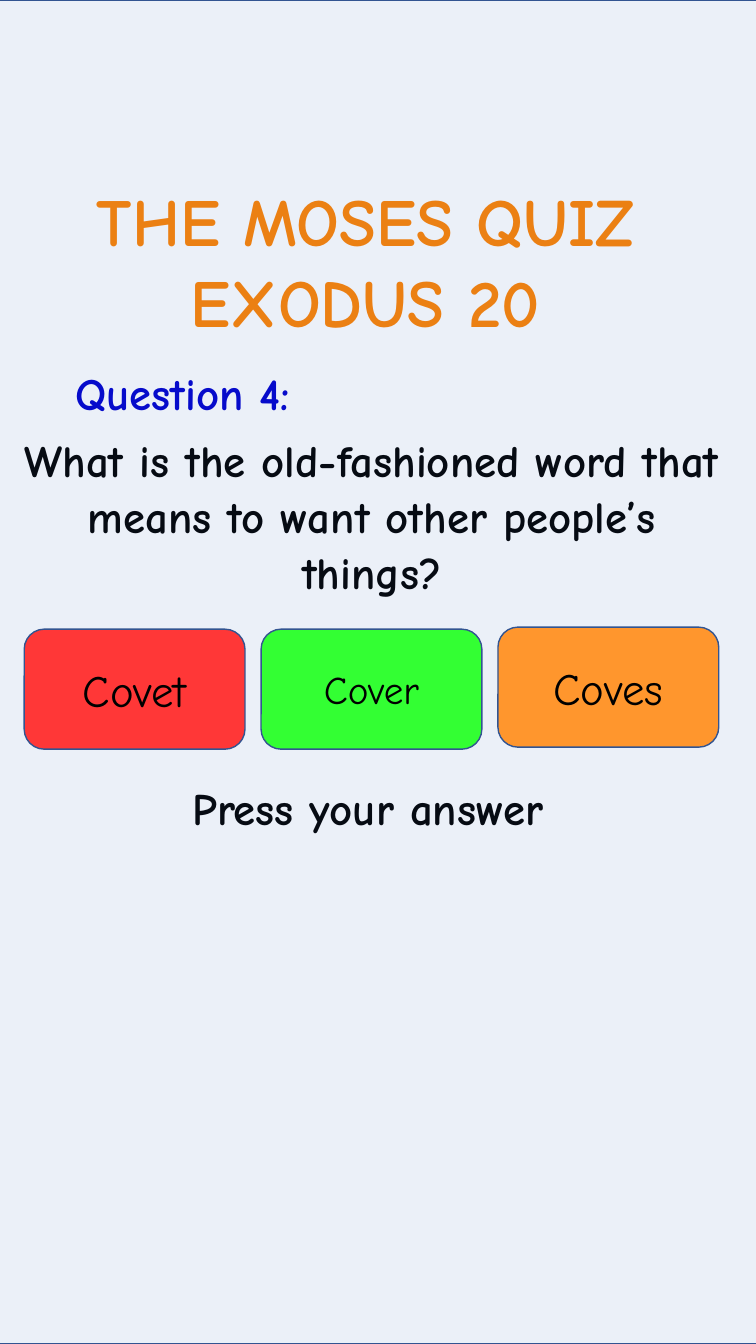
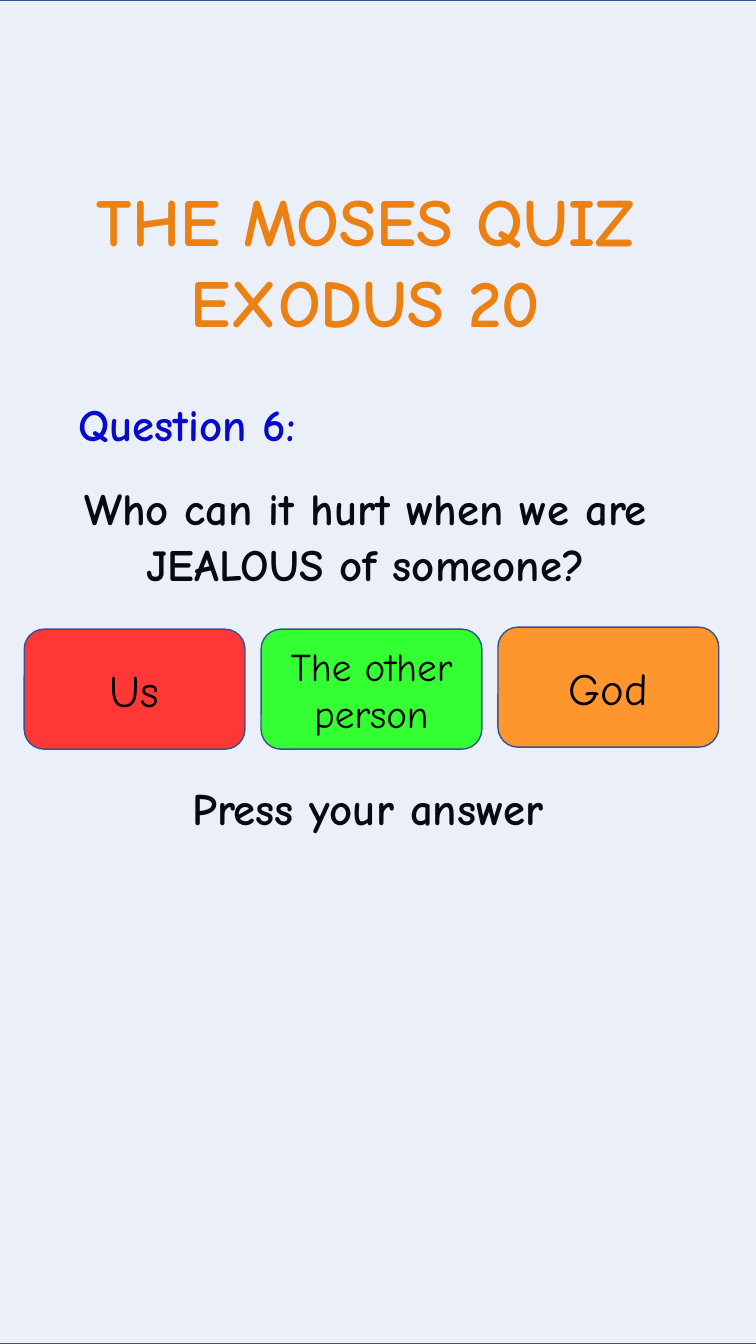
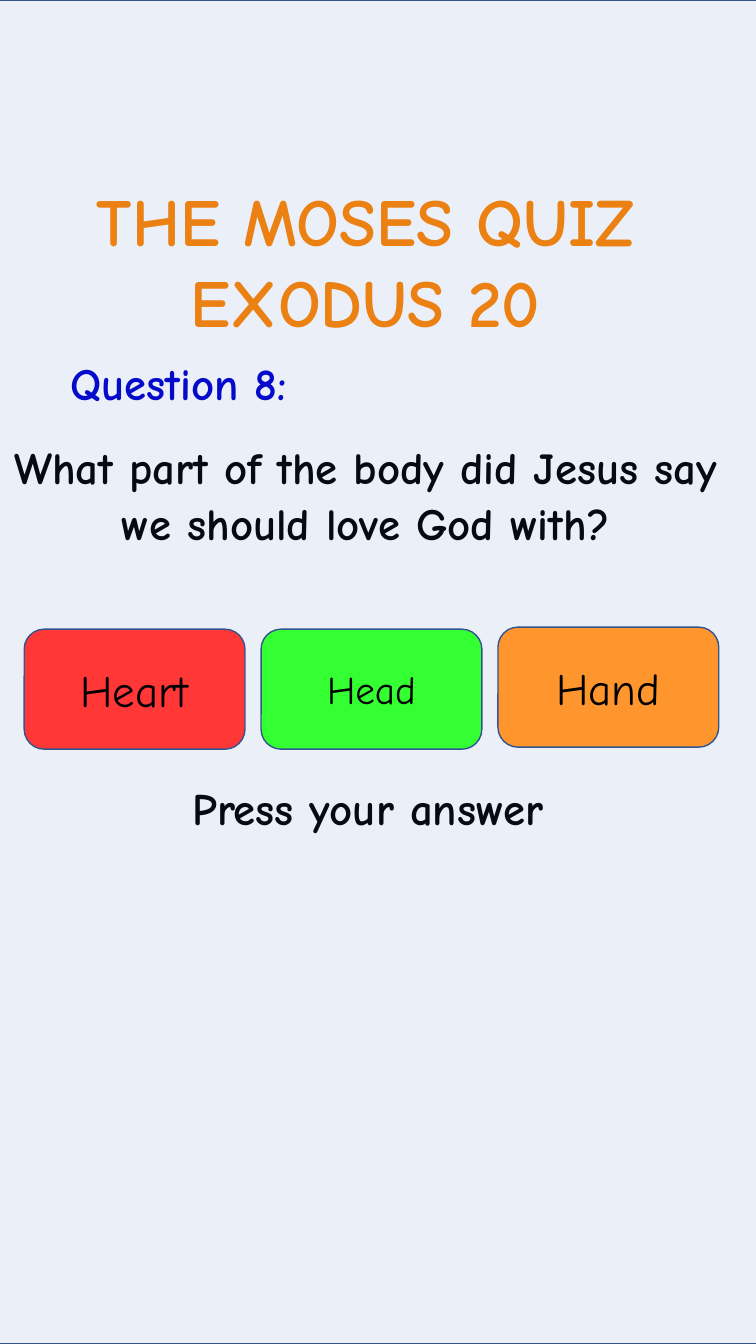
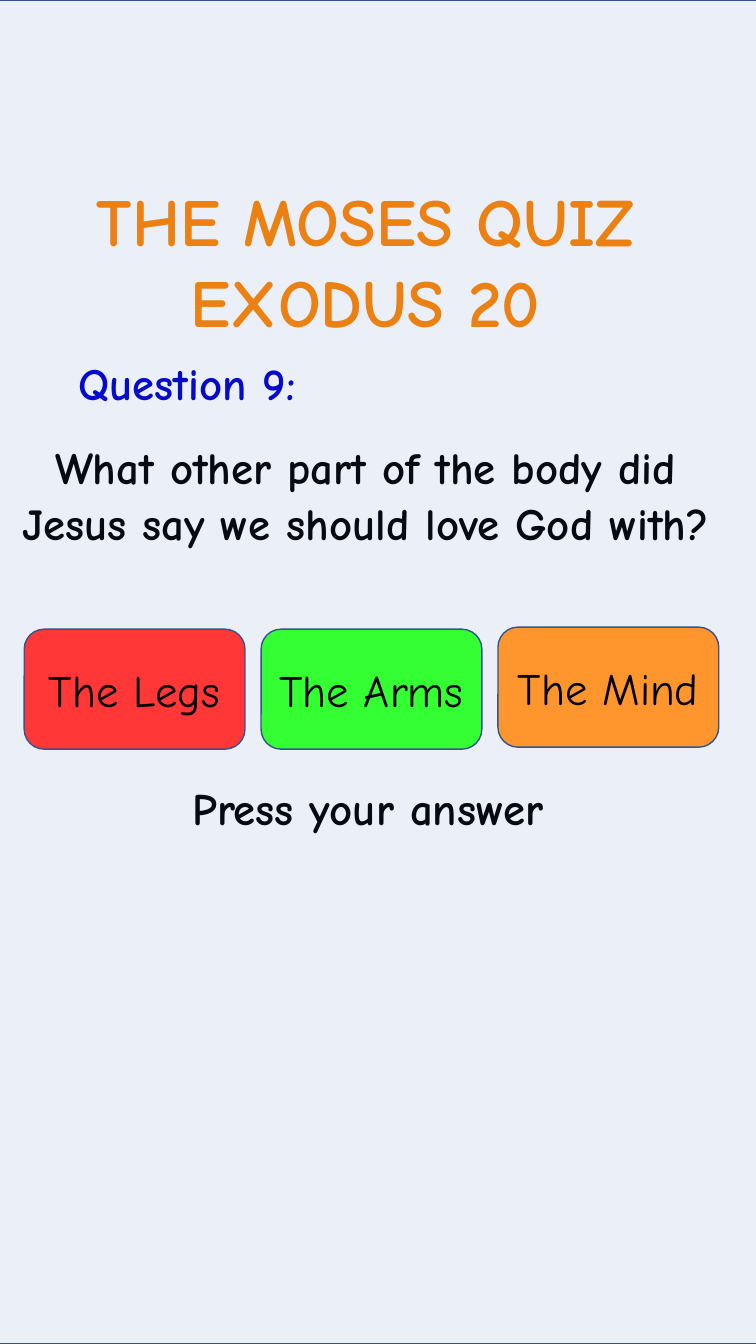
from lxml.etree import SubElement
from pptx import Presentation
from pptx.dml.color import RGBColor
from pptx.enum.shapes import MSO_SHAPE
from pptx.enum.text import MSO_ANCHOR, PP_ALIGN
from pptx.oxml.ns import qn
from pptx.util import Inches, Pt

WIDTH, HEIGHT = 7.5, 13.33
FONT = "Comic Neue"

BLACK = RGBColor(0x00, 0x00, 0x00)
ORANGE = RGBColor(0xFF, 0x82, 0x00)
BLUE = RGBColor(0x00, 0x00, 0xCC)
TINT = RGBColor(0x44, 0x72, 0xC4)
OUTLINE = RGBColor(0x32, 0x54, 0x91)
RED_BUTTON = RGBColor(0xFF, 0x37, 0x37)
GREEN_BUTTON = RGBColor(0x33, 0xFF, 0x33)
ORANGE_BUTTON = RGBColor(0xFF, 0x96, 0x2D)

TITLE = ["THE MOSES QUIZ ", "EXODUS 20 "]
PROMPT = "Press your answer"
TINT_PERCENT = 10
BLEED = 0.3

BUTTON_LEFT, BUTTON_WIDTH, BUTTON_HEIGHT, BUTTON_STEP = 0.24, 2.19, 1.19, 2.35
BUTTONS = [(RED_BUTTON, 6.24), (GREEN_BUTTON, 6.24), (ORANGE_BUTTON, 6.22)]

QUESTIONS = [
    {
        "label": "Question 4:", "label_at": (0.43, 3.58),
        "text": "What is the old-fashioned word that means to want other people’s things?",
        "text_at": (0.06, 4.22),
        "answers": [("Covet", 32), ("Cover", 28), ("Coves", 32)],
    },
    {
        "label": "Question 6:", "label_at": (0.47, 3.89),
        "text": "Who can it hurt when we are JEALOUS of someone?",
        "text_at": (0, 4.7),
        "answers": [("Us", 32), ("The other person", 28), ("God", 32)],
    },
    {
        "label": "Question 8:", "label_at": (0.39, 3.48),
        "text": "What part of the body did Jesus say we should love God with?",
        "text_at": (0, 4.29),
        "answers": [("Heart", 32), ("Head", 28), ("Hand", 32)],
    },
    {
        "label": "Question 9:", "label_at": (0.47, 3.48),
        "text": "What other part of the body did Jesus say we should love God with?",
        "text_at": (0, 4.29),
        "answers": [("The Legs", 32), ("The Arms", 32), ("The Mind", 32)],
    },
]


def write(frame, lines, size=32, color=BLACK, bold=True, align=PP_ALIGN.CENTER,
          spacing=None, before=None):
    frame.word_wrap = True
    for index, line in enumerate(lines):
        paragraph = frame.add_paragraph() if index else frame.paragraphs[0]
        paragraph.text = line
        paragraph.alignment = align
        paragraph.line_spacing = spacing
        paragraph.space_before = before
        font = paragraph.font
        font.name, font.size, font.bold = FONT, Pt(size), bold
        font.color.rgb = color


def add_text(slide, box, lines, **style):
    shape = slide.shapes.add_textbox(*map(Inches, box))
    write(shape.text_frame, lines, **style)


def add_panel(slide, kind, box, color):
    shape = slide.shapes.add_shape(kind, *map(Inches, box))
    shape.shadow.inherit = False
    shape.fill.solid()
    shape.fill.fore_color.rgb = color
    shape.line.color.rgb = OUTLINE
    shape.line.width = Pt(1)
    return shape


def add_tint(slide):
    box = (-BLEED, 0, WIDTH + 2 * BLEED, HEIGHT)
    shape = add_panel(slide, MSO_SHAPE.RECTANGLE, box, TINT)
    color = shape.fill._xPr.find(qn("a:solidFill"))[0]
    SubElement(color, qn("a:alpha"), val=str(TINT_PERCENT * 1000))


def add_answers(slide, answers):
    for column, ((color, top), (answer, size)) in enumerate(zip(BUTTONS, answers)):
        box = (BUTTON_LEFT + column * BUTTON_STEP, top, BUTTON_WIDTH, BUTTON_HEIGHT)
        button = add_panel(slide, MSO_SHAPE.ROUNDED_RECTANGLE, box, color)
        button.text_frame.vertical_anchor = MSO_ANCHOR.MIDDLE
        write(button.text_frame, [answer], size=size, bold=False)


def add_question(slide, question):
    add_text(slide, (0.3, 1.73, 6.89, 1.72), TITLE, size=48, color=ORANGE)
    add_text(slide, (*question["label_at"], 2.77, 0.64), [question["label"]], color=BLUE)
    add_text(slide, (*question["text_at"], 7.26, 1.63), [question["text"]],
             spacing=Pt(40), before=Pt(7.5))
    add_text(slide, (1.81, 7.75, 4.22, 0.72), [PROMPT], align=PP_ALIGN.LEFT,
             spacing=0.9, before=Pt(7.5))
    add_tint(slide)
    add_answers(slide, question["answers"])


def main():
    presentation = Presentation()
    presentation.slide_width = Inches(WIDTH)
    presentation.slide_height = Inches(HEIGHT)
    for question in QUESTIONS:
        add_question(presentation.slides.add_slide(presentation.slide_layouts[6]), question)
    presentation.save("out.pptx")


if __name__ == "__main__":
    main()
